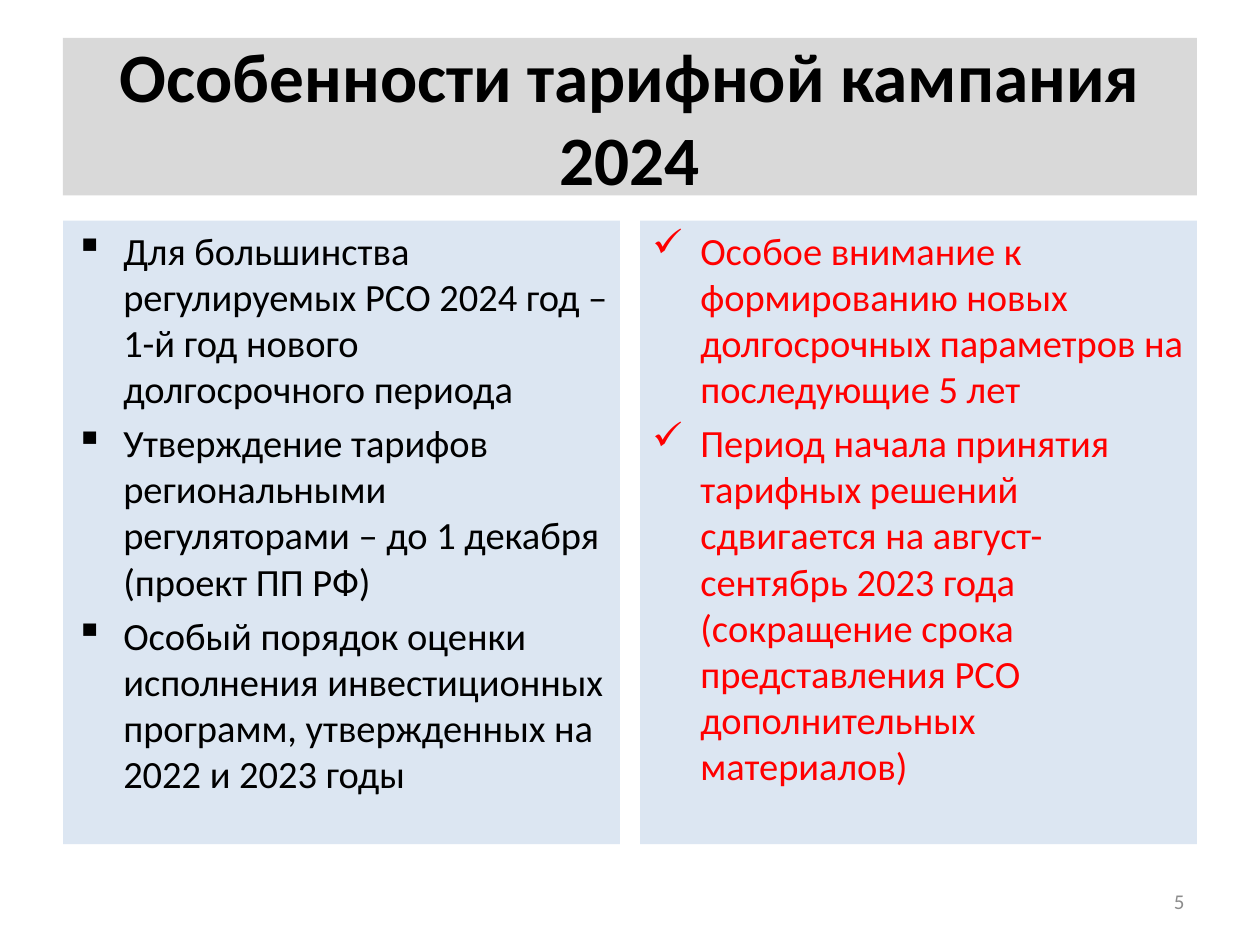
from lxml import etree
from pptx import Presentation
from pptx.dml.color import RGBColor
from pptx.enum.shapes import MSO_SHAPE
from pptx.enum.text import MSO_ANCHOR, PP_ALIGN
from pptx.oxml.ns import qn
from pptx.util import Inches, Pt

RECT = MSO_SHAPE.RECTANGLE
TOP, MIDDLE = MSO_ANCHOR.TOP, MSO_ANCHOR.MIDDLE
LEFT, CENTER, RIGHT = PP_ALIGN.LEFT, PP_ALIGN.CENTER, PP_ALIGN.RIGHT

FONT = "Calibri"
COLORS = {
    "title": "D9D9D9",
    "panel": "DCE6F2",
    "black": "000000",
    "red": "FF0000",
    "gray": "8C8C8C",
}
MARGIN, WIDTH, GAP = 0.5, 9, 0.16
PANEL = (WIDTH - GAP) / 2
INDENT = 0.38

COLUMNS = [
    ("▪", "black", [
        "Для большинства регулируемых РСО 2024 год – 1-й год нового "
        "долгосрочного периода",
        "Утверждение тарифов региональными регуляторами – до 1 декабря "
        "(проект ПП РФ)",
        "Особый порядок оценки исполнения инвестиционных программ, "
        "утвержденных на 2022 и 2023 годы",
    ]),
    ("✓", "red", [
        "Особое внимание к формированию новых долгосрочных параметров на "
        "последующие 5 лет",
        "Период начала принятия тарифных решений сдвигается на "
        "август-сентябрь 2023 года (сокращение срока представления РСО "
        "дополнительных материалов)",
    ]),
]


def color(name):
    return RGBColor.from_string(COLORS[name])


def add_box(slide, x, y, w, h, fill, anchor):
    """Add a plain filled rectangle and return its text frame."""
    box = slide.shapes.add_shape(RECT, Inches(x), Inches(y), Inches(w), Inches(h))
    box.shadow.inherit = False
    box.fill.solid()
    box.fill.fore_color.rgb = color(fill)
    box.line.fill.background()
    frame = box.text_frame
    frame.word_wrap = True
    frame.vertical_anchor = anchor
    return frame


def add_run(para, text, size, ink, align, bold=False):
    para.alignment = align
    run = para.add_run()
    run.text = text
    font = run.font
    font.name, font.size, font.bold = FONT, Pt(size), bold
    font.color.rgb = color(ink)


def set_bullet(para, char):
    """Give the paragraph a hanging indent and a bullet sign."""
    props = para._p.get_or_add_pPr()
    props.set("marL", str(Inches(INDENT)))
    props.set("indent", str(-Inches(INDENT)))
    etree.SubElement(props, qn("a:buChar")).set("char", char)


def add_list(slide, x, char, ink, items):
    frame = add_box(slide, x, 1.75, PANEL, 4.95, "panel", TOP)
    for i, item in enumerate(items):
        para = frame.add_paragraph() if i else frame.paragraphs[0]
        para.space_before = Pt(4.4)
        set_bullet(para, char)
        add_run(para, item, 22, ink, LEFT)


def add_number(slide, text):
    box = slide.shapes.add_textbox(Inches(7.17), Inches(6.95), Inches(2.33), Inches(0.4))
    frame = box.text_frame
    frame.word_wrap = True
    frame.vertical_anchor = MIDDLE
    add_run(frame.paragraphs[0], text, 12, "gray", RIGHT)


def main():
    deck = Presentation()
    deck.slide_width, deck.slide_height = Inches(10), Inches(7.5)
    slide = deck.slides.add_slide(deck.slide_layouts[6])
    title = add_box(slide, MARGIN, 0.3, WIDTH, 1.25, "title", MIDDLE)
    add_run(title.paragraphs[0], "Особенности тарифной кампания 2024",
            39.6, "black", CENTER, bold=True)
    for i, (char, ink, items) in enumerate(COLUMNS):
        add_list(slide, MARGIN + i * (PANEL + GAP), char, ink, items)
    add_number(slide, "5")
    deck.save("out.pptx")


if __name__ == "__main__":
    main()
